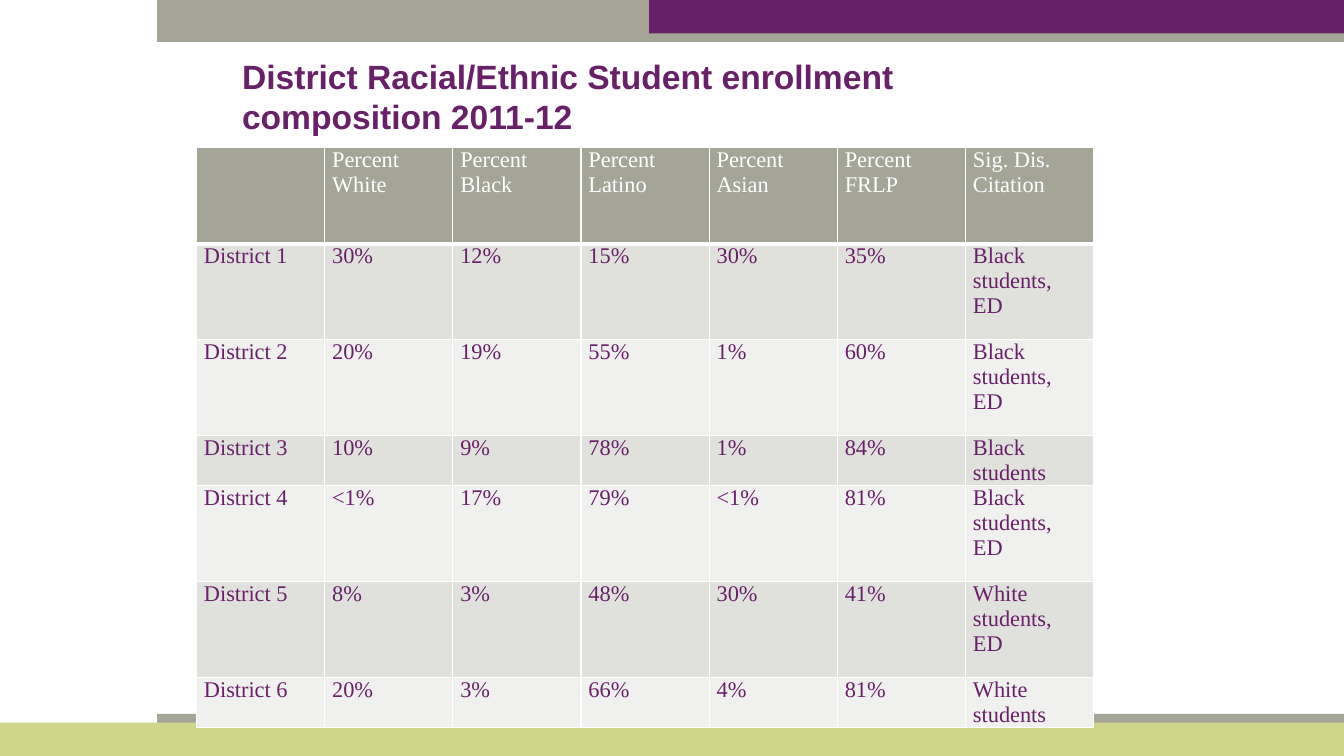
from dataclasses import dataclass

from lxml.etree import SubElement
from pptx import Presentation
from pptx.dml.color import RGBColor
from pptx.enum.shapes import MSO_SHAPE as Preset
from pptx.enum.text import MSO_ANCHOR as Anchor, MSO_AUTO_SIZE as AutoSize, PP_ALIGN as Align
from pptx.oxml.ns import qn
from pptx.slide import Slide
from pptx.table import _Cell as Cell
from pptx.util import Cm, Pt


@dataclass(frozen=True)
class Theme:
    purple: str = "682069"
    stone: str = "A4A597"
    lime: str = "CFD58B"
    white: str = "FFFFFF"
    row_bands: tuple[str, str] = ("E0E1DD", "F0F0EF")
    title_font: str = "Arial"
    title_size: int = 24
    table_font: str = "Times New Roman"
    table_size: int = 16
    grid_width: int = 1
    header_rule_width: int = 3


@dataclass(frozen=True)
class Bar:
    """A bar that runs to the right edge of the slide."""
    left: float
    top: float
    height: float
    color: str


@dataclass(frozen=True)
class District:
    white: str
    black: str
    latino: str
    asian: str
    frlp: str
    citation: str
    row_height: float

    def texts(self, number: int) -> list[str]:
        return [f"District {number}", self.white, self.black, self.latino,
                self.asian, self.frlp, self.citation]


THEME = Theme()
SLIDE_WIDTH, SLIDE_HEIGHT = 33.87, 19.05
TALL_ROW, SHORT_ROW = 2.42, 1.23
COLUMN_WIDTH = 3.23

BARS = [
    Bar(3.96, 0, 1.06, THEME.stone),
    Bar(3.96, 17.99, 1.06, THEME.stone),
    Bar(0, 18.21, 0.84, THEME.lime),
    Bar(16.36, 0, 0.84, THEME.purple),
]

HEADINGS = ["", "Percent White", "Percent Black", "Percent Latino",
            "Percent Asian", "Percent FRLP", "Sig. Dis.\nCitation"]
DISTRICTS = [
    District("30%", "12%", "15%", "30%", "35%", "Black students, ED", TALL_ROW),
    District("20%", "19%", "55%", "1%", "60%", "Black students, ED", TALL_ROW),
    District("10%", "9%", "78%", "1%", "84%", "Black students", SHORT_ROW),
    District("<1%", "17%", "79%", "<1%", "81%", "Black students, ED", TALL_ROW),
    District("8%", "3%", "48%", "30%", "41%", "White students, ED", TALL_ROW),
    District("20%", "3%", "66%", "4%", "81%", "White students", SHORT_ROW),
]


def rgb(color: str) -> RGBColor:
    return RGBColor.from_string(color)


def draw_bar(slide: Slide, bar: Bar) -> None:
    strip = slide.shapes.add_shape(
        Preset.RECTANGLE, Cm(bar.left), Cm(bar.top),
        Cm(SLIDE_WIDTH - bar.left), Cm(bar.height))
    strip.shadow.inherit = False
    strip.fill.solid()
    strip.fill.fore_color.rgb = rgb(bar.color)
    strip.line.fill.background()


def write_title(slide: Slide, wording: str) -> None:
    title = slide.shapes.title
    title.left, title.top, title.width, title.height = Cm(6.1), Cm(1.4), Cm(21.16), Cm(2.34)
    frame = title.text_frame
    frame.text = wording
    frame.word_wrap = True
    frame.auto_size = AutoSize.NONE
    frame.vertical_anchor = Anchor.TOP
    frame.margin_left = frame.margin_top = frame.margin_right = frame.margin_bottom = 0
    heading = frame.paragraphs[0]
    heading.alignment = Align.LEFT
    heading.font.name = THEME.title_font
    heading.font.size = Pt(THEME.title_size)
    heading.font.bold = True
    heading.font.color.rgb = rgb(THEME.purple)


def set_borders(cell: Cell, bottom_width: int) -> None:
    """Give the cell white borders; call before the fill, which must follow them in the XML."""
    properties = cell._tc.get_or_add_tcPr()
    for side in ("lnL", "lnR", "lnT", "lnB"):
        width = bottom_width if side == "lnB" else THEME.grid_width
        line = SubElement(properties, qn(f"a:{side}"), w=str(Pt(width)))
        SubElement(SubElement(line, qn("a:solidFill")), qn("a:srgbClr"), val=THEME.white)


def write_cell(cell: Cell, wording: str, fill: str, color: str, bottom_width: int) -> None:
    set_borders(cell, bottom_width)
    cell.fill.solid()
    cell.fill.fore_color.rgb = rgb(fill)
    cell.margin_left = cell.margin_right = Cm(0.19)
    cell.margin_top = cell.margin_bottom = 0
    cell.text = wording
    for paragraph in cell.text_frame.paragraphs:
        paragraph.font.name = THEME.table_font
        paragraph.font.size = Pt(THEME.table_size)
        paragraph.font.bold = False
        paragraph.font.color.rgb = rgb(color)


def draw_enrollment(slide: Slide) -> None:
    heights = [TALL_ROW] + [district.row_height for district in DISTRICTS]
    enrollment = slide.shapes.add_table(
        len(heights), len(HEADINGS), Cm(4.95), Cm(3.72),
        Cm(COLUMN_WIDTH * len(HEADINGS)), Cm(sum(heights))).table
    for column in enrollment.columns:
        column.width = Cm(COLUMN_WIDTH)
    for row, height in zip(enrollment.rows, heights):
        row.height = Cm(height)
    for cell, heading in zip(enrollment.rows[0].cells, HEADINGS):
        write_cell(cell, heading, THEME.stone, THEME.white, THEME.header_rule_width)
    for number, district in enumerate(DISTRICTS, start=1):
        band = THEME.row_bands[(number - 1) % 2]
        for cell, wording in zip(enrollment.rows[number].cells, district.texts(number)):
            write_cell(cell, wording, band, THEME.purple, THEME.grid_width)


def main() -> None:
    deck = Presentation()
    deck.slide_width, deck.slide_height = Cm(SLIDE_WIDTH), Cm(SLIDE_HEIGHT)
    slide = deck.slides.add_slide(deck.slide_layouts.get_by_name("Title Only"))
    for bar in BARS:
        draw_bar(slide, bar)
    write_title(slide, "District Racial/Ethnic Student enrollment composition 2011-12")
    draw_enrollment(slide)
    deck.save("out.pptx")


if __name__ == "__main__":
    main()
